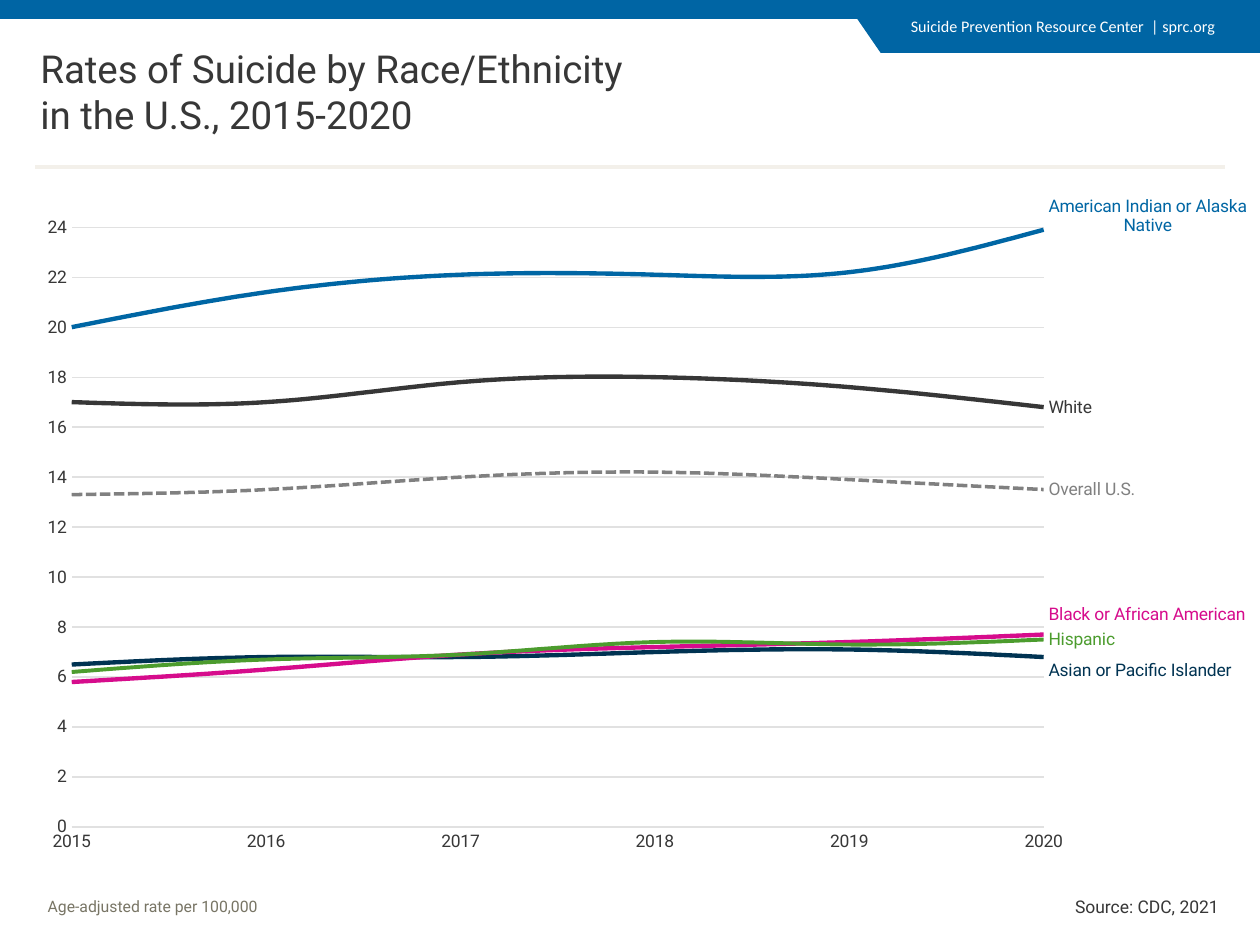
from dataclasses import dataclass

import pptx
import pptx.chart.data
import pptx.dml.color
import pptx.enum.chart
import pptx.enum.dml
import pptx.enum.shapes
import pptx.enum.text
import pptx.oxml
import pptx.oxml.ns
import pptx.util
from lxml import etree

Inches, Pt = pptx.util.Inches, pptx.util.Pt
ALIGN = pptx.enum.text.PP_ALIGN
qn = pptx.oxml.ns.qn


@dataclass(frozen=True)
class Theme:
    font: str = "Roboto"
    header_font: str = "Calibri"
    blue: str = "0065A4"
    white: str = "FFFFFF"
    ink: str = "373737"
    note: str = "787565"
    rule: str = "F3F0EA"
    grid: str = "E1E1E1"
    title_size: float = 22
    body_size: float = 10
    header_size: float = 9.2
    note_size: float = 9


T = Theme()
W, H = 10, 7.5
YEARS = ["2015", "2016", "2017", "2018", "2019", "2020"]
# name, rates, colour, line width, dash, label shift (shares of chart size)
SERIES = [
    ("American Indian or Alaska Native", (20, 21.4, 22.1, 22.1, 22.2, 23.9), "0066A4", 2.5, False, (0, -0.02)),
    ("Asian or Pacific Islander", (6.5, 6.8, 6.8, 7, 7.1, 6.8), "003352", 2.5, False, (0, 0.02)),
    ("Black or African American", (5.8, 6.3, 6.9, 7.2, 7.4, 7.7), "D60C8C", 2.5, False, (0, -0.03)),
    ("White", (17, 17, 17.8, 18, 17.6, 16.8), "373737", 2.5, False, None),
    ("Hispanic ", (6.2, 6.7, 6.9, 7.4, 7.3, 7.5), "4C9C2E", 2.25, False, (0, 0)),
    ("Overall U.S. ", (13.3, 13.5, 14, 14.2, 13.9, 13.5), "808080", 2, True, None),
]


def rgb(value):
    return pptx.dml.color.RGBColor.from_string(value)


def box(left, top, width, height):
    """Turn shares of the slide's size into lengths."""
    return [Inches(v) for v in (left * W, top * H, width * W, height * H)]


def style_font(font, size, color, name=T.font):
    for key, value in dict(size=Pt(size), name=name, bold=False).items():
        setattr(font, key, value)
    font.color.rgb = rgb(color)


def style_line(line, color, width):
    line.color.rgb = rgb(color)
    line.width = Pt(width)


def fill_plain(shape, color):
    shape.shadow.inherit = False
    shape.fill.solid()
    shape.fill.fore_color.rgb = rgb(color)
    shape.line.fill.background()


def add_text(s, area, text, size, color, name=T.font, align=ALIGN.LEFT):
    tf = s.shapes.add_textbox(*area).text_frame
    tf.word_wrap = True
    p = tf.paragraphs[0]
    p.alignment = align
    r = p.add_run()
    r.text = text
    style_font(r.font, size, color, name)


def add_header(s, left, top, width, height):
    # Blue band with a slanted tab at its right end
    band = s.shapes.add_shape(pptx.enum.shapes.MSO_SHAPE.RECTANGLE,
                              *box(left, top, width, height * 0.36))
    fill_plain(band, T.blue)
    x, y, right, bottom = [Inches(v) for v in (
        (left + 0.677 * width) * W, (top + 0.24 * height) * H,
        (left + width) * W, (top + height) * H)]
    tab = s.shapes.build_freeform(right, y)
    tab.add_line_segments([(right, bottom), (x + Inches(0.22), bottom), (x, y)])
    fill_plain(tab.convert_to_shape(), T.blue)
    add_text(s, box(left + 0.713 * width, top + 0.2 * height, 0.295, height),
             "Suicide Prevention Resource Center  | sprc.org",
             T.header_size, T.white, T.header_font)


def add_title(s, left, top, width, height):
    title = s.shapes.title
    title.left, title.top, title.width, title.height = box(left, top, width, height)
    tf = title.text_frame
    tf.text = "Rates of Suicide by Race/Ethnicity in the U.S., 2015-2020"
    for key, value in dict(word_wrap=True, auto_size=pptx.enum.text.MSO_AUTO_SIZE.NONE,
                           vertical_anchor=pptx.enum.text.MSO_ANCHOR.TOP).items():
        setattr(tf, key, value)
    p = tf.paragraphs[0]
    p.alignment = ALIGN.LEFT
    style_font(p.runs[0].font, T.title_size, T.ink)


def add_rule(s, left, top, width):
    x, y, w, _ = box(left, top, width, 0)
    rule = s.shapes.add_connector(pptx.enum.shapes.MSO_CONNECTOR.STRAIGHT, x, y, x + w, y)
    style_line(rule.line, T.rule, 2.25)
    etree.SubElement(rule._element.spPr, qn("a:effectLst"))


def manual_layout(values, inner=False):
    """Chart layout element; inner fixes the plot itself, without its axis labels."""
    layout = pptx.oxml.parse_xml(f'<c:layout {pptx.oxml.ns.nsdecls("c")}><c:manualLayout/></c:layout>')
    settings = [("layoutTarget", "inner"), ("xMode", "edge"), ("yMode", "edge")] if inner else []
    for tag, value in settings + list(zip("xywh", values)):
        etree.SubElement(layout[0], qn("c:" + tag)).set("val", str(value))
    return layout


def label_series_end(series, color, shift):
    """Name the series at its last point, with a leader line if moved."""
    series.data_labels.show_value = False
    label = series.points[len(YEARS) - 1].data_label
    style_font(label.font, T.body_size, color)
    label.position = pptx.enum.chart.XL_LABEL_POSITION.RIGHT
    labels = series.data_labels._element
    dlbl = labels.find(qn("c:dLbl"))
    dlbl.find(qn("c:showVal")).set("val", "0")
    dlbl.find(qn("c:showSerName")).set("val", "1")
    if shift:
        dlbl.insert(1, manual_layout(shift))
    c15 = "http://schemas.microsoft.com/office/drawing/2012/chart"
    labels.append(pptx.oxml.parse_xml(
        f'<c:extLst {pptx.oxml.ns.nsdecls("c")}><c:ext uri="{{CE6537A1-D6FC-4f65-9D91-7224C49458BB}}" '
        f'xmlns:c15="{c15}"><c15:showLeaderLines val="1"/></c:ext></c:extLst>'))


def add_rate_chart(s, left, top, width, height):
    data = pptx.chart.data.CategoryChartData()
    data.categories = YEARS
    for name, rates, *_ in SERIES:
        data.add_series(name, rates)
    chart = s.shapes.add_chart(pptx.enum.chart.XL_CHART_TYPE.LINE,
                               *box(left, top, width, height), data).chart
    chart.has_legend = chart.has_title = False
    style_font(chart.font, T.body_size, T.ink)
    chart.plots[0].vary_by_categories = False

    # Axes: years start on the value axis
    years, rates = chart.category_axis, chart.value_axis
    for axis in (years, rates):
        axis.major_tick_mark = axis.minor_tick_mark = pptx.enum.chart.XL_TICK_MARK.NONE
        style_font(axis.tick_labels.font, T.body_size, T.ink)
    style_line(years.format.line, T.grid, 0.75)
    rates.format.line.fill.background()
    for key, value in dict(minimum_scale=0, maximum_scale=24, major_unit=2,
                           has_major_gridlines=True).items():
        setattr(rates, key, value)
    style_line(rates.major_gridlines.format.line, T.grid, 0.75)
    between = etree.Element(qn("c:crossBetween"))
    between.set("val", "midCat")
    rates._element.find(qn("c:crosses")).addnext(between)

    # Lines and their end labels
    for series, (_, _, color, weight, dashed, shift) in zip(chart.plots[0].series, SERIES):
        series.smooth = True
        series.marker.style = pptx.enum.chart.XL_MARKER_STYLE.NONE
        style_line(series.format.line, color, weight)
        if dashed:
            series.format.line.dash_style = pptx.enum.dml.MSO_LINE.SQUARE_DOT
        label_series_end(series, color, shift)

    plot = chart._chartSpace.chart.plotArea
    for old in plot.findall(qn("c:layout")):
        plot.remove(old)
    plot.insert(0, manual_layout((0.03, 0.04, 0.8, 0.88), inner=True))


def add_footer(s, left, top, width, height):
    add_text(s, box(left, top, width * 0.23, height),
             "Age-adjusted rate per 100,000", T.note_size, T.note)
    add_text(s, box(left + width * 0.8, top, width * 0.2, height),
             "Source: CDC, 2021", T.body_size, T.ink, align=ALIGN.RIGHT)


def main():
    prs = pptx.Presentation()
    prs.slide_width, prs.slide_height = Inches(W), Inches(H)
    s = prs.slides.add_slide(prs.slide_layouts[5])
    add_header(s, 0, 0, 1, 0.056)
    add_title(s, 0.022, 0.041, 0.487, 0.137)
    add_rate_chart(s, 0.028, 0.208, 0.966, 0.725)
    add_rule(s, 0.028, 0.177, 0.944)
    add_footer(s, 0.028, 0.942, 0.949, 0.035)
    prs.save("out.pptx")


if __name__ == "__main__":
    main()
